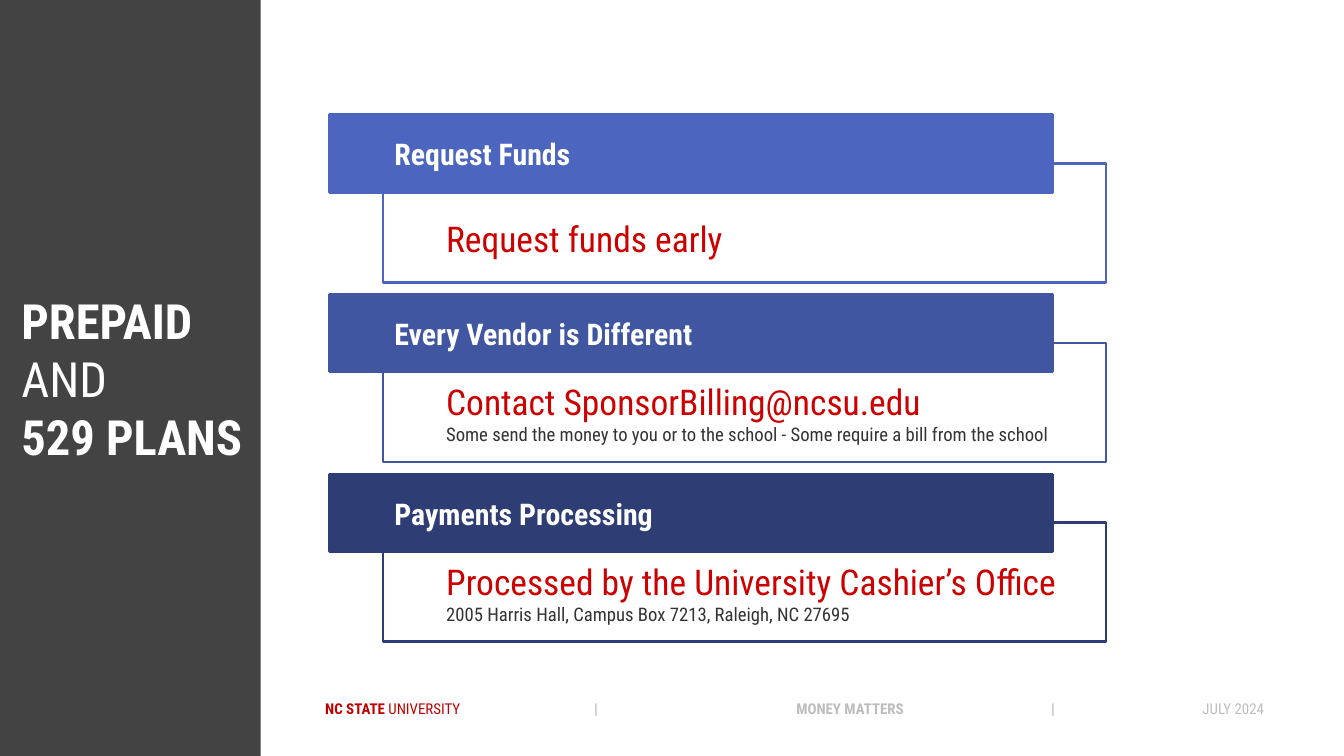
from lxml import etree
from pptx import Presentation
from pptx import util as u
from pptx.dml.color import RGBColor
from pptx.enum import shapes, text
from pptx.oxml.ns import qn

WHITE = RGBColor(0xFF, 0xFF, 0xFF)
DARK = RGBColor(0x43, 0x43, 0x43)
INK = RGBColor(0x33, 0x33, 0x33)
RED = RGBColor(0xCC, 0x00, 0x00)
BRICK = RGBColor(0xC0, 0x00, 0x00)
GREY = RGBColor(0xBD, 0xBD, 0xBD)
BLUES = [RGBColor(0x4C, 0x65, 0xBF), RGBColor(0x41, 0x56, 0xA1),
         RGBColor(0x2E, 0x3E, 0x74)]
FONT = "Roboto Condensed"

# Text styles: size, colour, bold
TITLE = (52, WHITE, True)
LIGHT = (52, WHITE, False)
HEAD = (32, WHITE, True)
LEAD = (38, RED, False)
NOTE = (20, INK, False)

# Cards: heading, lead line, note, share of height for the text
CARDS = [
    ("Request Funds", "Request funds early", None, 11.56),
    ("Every Vendor is Different", "Contact SponsorBilling@ncsu.edu",
     "Some send the money to you or to the school - "
     "Some require a bill from the school", 10.22),
    ("Payments Processing", "Processed by the University Cashier’s Office",
     "2005 Harris Hall, Campus Box 7213, Raleigh, NC 27695", 10.22),
]
TOP, STEP, BAR = 15.2, 23.78, 10.22


class Deck:
    """Holds the style and the slide; places are percent of slide size."""

    def __init__(self, wide, high):
        self.prs = Presentation()
        self.prs.slide_width = u.Inches(wide)
        self.prs.slide_height = u.Inches(high)
        self.slide = self.prs.slides.add_slide(self.prs.slide_layouts[6])

    def place(self, x, y, w, h):
        wide, high = self.prs.slide_width, self.prs.slide_height
        return [int(part * full / 100) for part, full in
                zip((x, y, w, h), (wide, high, wide, high))]

    def rect(self, at, fill, line=None):
        box = self.slide.shapes.add_shape(
            shapes.MSO_SHAPE.RECTANGLE, *self.place(*at))
        box.shadow.inherit = False
        box.fill.solid()
        box.fill.fore_color.rgb = fill
        if line is None:
            box.line.fill.background()
        else:
            box.line.color.rgb = line
            box.line.width = u.Pt(3)
            edge = box.element.spPr.find(qn("a:ln"))
            etree.SubElement(edge, qn("a:round"))
        return box

    def label(self, at):
        return self.slide.shapes.add_textbox(*self.place(*at))

    def frame(self, box, **extra):
        form = {"word_wrap": True, "vertical_anchor": text.MSO_ANCHOR.MIDDLE}
        sides = ("left", "top", "right", "bottom")
        form.update({f"margin_{side}": u.Inches(0.1) for side in sides})
        form.update(extra)
        for key, value in form.items():
            setattr(box.text_frame, key, value)
        return box.text_frame

    def run(self, para, words, style):
        size, color, bold = style
        run = para.add_run()
        run.text = words
        form = {"name": FONT, "size": u.Pt(size), "bold": bold}
        for key, value in form.items():
            setattr(run.font, key, value)
        run.font.color.rgb = color

    def words(self, box, paras, **extra):
        """Each paragraph is a list of (words, style); None breaks a line."""
        frame = self.frame(box, **extra)
        for num, runs in enumerate(paras):
            para = frame.add_paragraph() if num else frame.paragraphs[0]
            para.alignment = text.PP_ALIGN.LEFT
            for item in runs:
                if item is None:
                    para.add_line_break()
                else:
                    self.run(para, *item)
        return frame

    def tabs(self, para, stops):
        props = para._p.get_or_add_pPr()
        group = etree.SubElement(props, qn("a:tabLst"))
        for pos, kind in stops:
            etree.SubElement(group, qn("a:tab"),
                             pos=str(u.Inches(pos)), algn=kind)

    def card(self, y, color, head, lead, note, high):
        self.rect((28.5, y + 6.4, 53.8, 15.73), WHITE, color)
        runs = [(lead, LEAD)]
        if note:
            runs += [None, (note, NOTE)]
        self.words(self.label((32.7, y + 10.53, 60.75, high)), [runs])
        self.rect((24.5, y, 53.8, BAR), color, color)
        bar = self.rect((28.85, y, 49.45, BAR), color, color)
        self.words(bar, [[(head, HEAD)]])


def main():
    deck = Deck(20, 11.25)

    # Side panel with the title
    deck.rect((0, 0, 19.4, 100), DARK)
    deck.words(deck.label((1.1, 0, 19.4, 100)),
               [[("PREPAID", TITLE)], [("AND", LIGHT)],
                [("529 PLANS", TITLE)]])

    # Three stacked cards
    for num, (color, card) in enumerate(zip(BLUES, CARDS)):
        deck.card(TOP + num * STEP, color, *card)

    # Footer on tab stops
    foot = deck.words(
        deck.label((19.4, 90.84, 79.55, 9)),
        [[("NC STATE ", (16, BRICK, True)),
          ("UNIVERSITY", (16, BRICK, False)),
          ("\t|\tMONEY MATTERS\t|", (16, GREY, True)),
          ("\tJULY 2024", (16, GREY, False))]],
        vertical_anchor=text.MSO_ANCHOR.TOP,
        margin_left=u.Inches(0.96), margin_top=u.Inches(0.2))
    deck.tabs(foot.paragraphs[0], [(4.03, "ctr"), (7.81, "ctr"),
                                   (10.83, "ctr"), (13.97, "r")])

    deck.prs.save("out.pptx")


if __name__ == "__main__":
    main()
